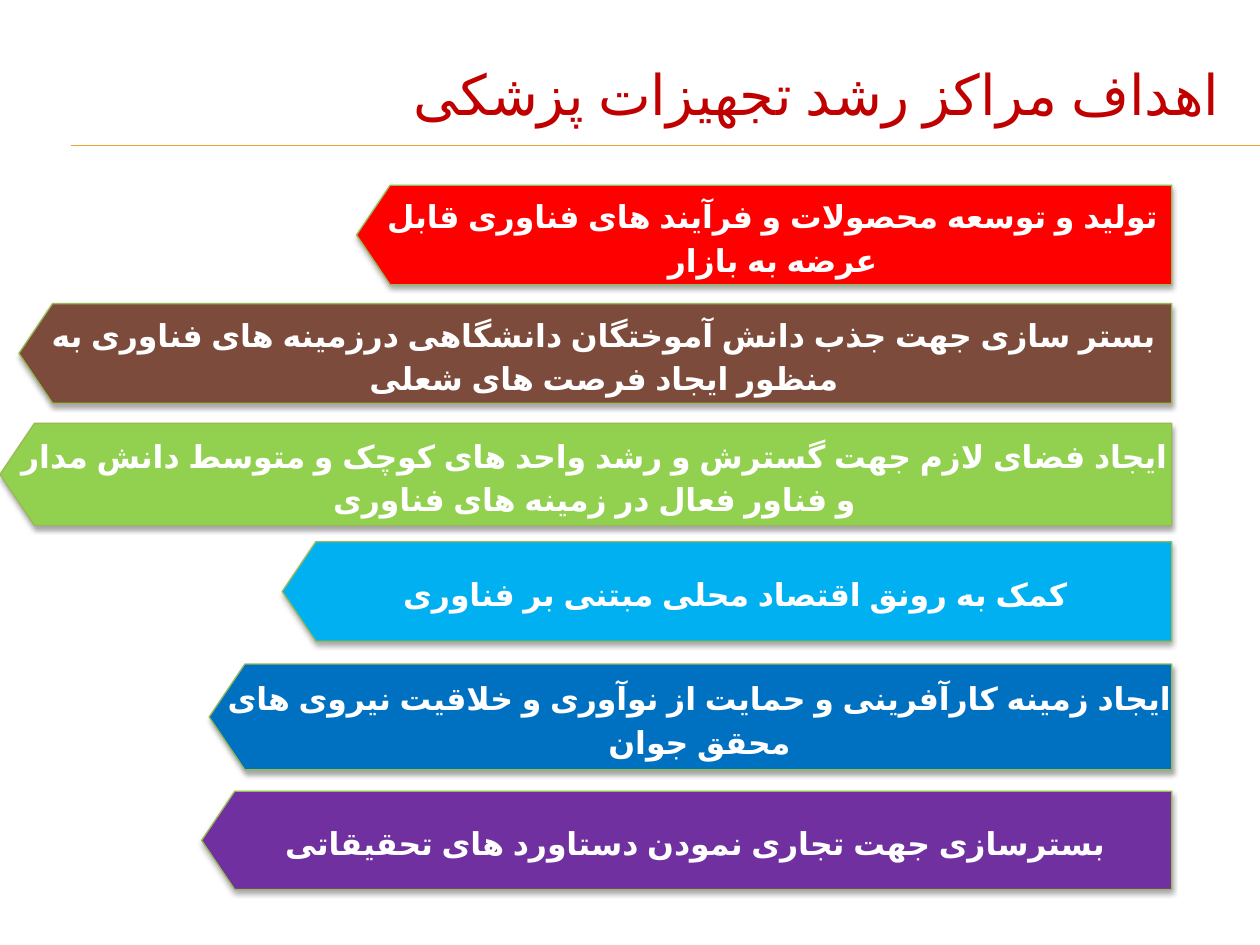
import dataclasses

import lxml.etree
import pptx
import pptx.dml.color
import pptx.enum.lang
import pptx.enum.shapes
import pptx.enum.text
import pptx.oxml.ns
import pptx.util

qn = pptx.oxml.ns.qn
MSO_ANCHOR = pptx.enum.text.MSO_ANCHOR
PP_ALIGN = pptx.enum.text.PP_ALIGN
W, H = pptx.util.Inches(10), pptx.util.Inches(7.5)


@dataclasses.dataclass(frozen=True)
class Theme:
    """Colours, font and sizes of the slide."""

    font: str = "Lato"
    title: str = "C00000"
    rule: str = "F0A22E"
    outline: str = "98B955"
    arrow_text: str = "FFFFFF"
    shadow: str = "000000"
    title_size: float = 32
    arrow_size: float = 18
    line_width: float = 0.75


THEME = Theme()
TITLE = "اهداف مراکز رشد تجهیزات پزشکی"
TITLE_BOX = (2.8, 4.8, 95, 10.13)
RULES = (15.37, 15.42)
RULE_LEFT = 5.6
ARROW_RIGHT = 93
ARROWS = [
    (28.3, 19.6, 10.53, "FF0000",
     "تولید و توسعه محصولات و فرآیند های فناوری قابل عرضه به بازار"),
    (1.5, 32.13, 10.53, "7C4B3B",
     "بستر سازی جهت جذب دانش آموختگان دانشگاهی درزمینه های فناوری به منظور ایجاد فرصت های شعلی"),
    (0, 44.8, 10.8, "92D050",
     "ایجاد فضای لازم جهت گسترش و رشد واحد های کوچک و متوسط دانش مدار و فناور فعال در زمینه های فناوری"),
    (22.4, 57.33, 10.53, "00B0F0",
     "کمک به رونق اقتصاد محلی مبتنی بر فناوری"),
    (16.6, 70.27, 11.2, "0070C0",
     "ایجاد زمینه کارآفرینی و حمایت از نوآوری و خلاقیت نیروی های محقق جوان"),
    (16, 83.73, 10.4, "7030A0",
     "بسترسازی جهت تجاری نمودن دستاورد های تحقیقاتی"),
]


def rgb(value):
    """Return the colour object for a hex value."""
    return pptx.dml.color.RGBColor.from_string(value)


def place(box):
    """Turn a box in percent of the slide into lengths."""
    x, y, w, h = box
    return [round(v * side / 100) for v, side in ((x, W), (y, H), (w, W), (h, H))]


def add_text(tf, text, *, size, color, bold=False, align=PP_ALIGN.CENTER, spacing=None):
    """Write one right-to-left Persian paragraph into a text frame."""
    tf.word_wrap = True
    tf.vertical_anchor = MSO_ANCHOR.MIDDLE
    p = tf.paragraphs[0]
    p.alignment = align
    p.line_spacing = spacing
    p._p.get_or_add_pPr().set("rtl", "1")
    r = p.add_run()
    r.text = text
    r.font.name = THEME.font
    r.font.size = pptx.util.Pt(size)
    r.font.bold = bold
    r.font.color.rgb = rgb(color)
    r._r.get_or_add_rPr().set("lang", "fa-IR")


def add_shadow(sp):
    """Give a shape a soft shadow that falls straight down."""
    sp.shadow.inherit = False
    effects = sp._element.spPr.find(qn("a:effectLst"))
    shadow = lxml.etree.SubElement(
        effects, qn("a:outerShdw"), blurRad=str(pptx.util.Pt(3.1)),
        dist=str(pptx.util.Pt(1.8)), dir="5400000", rotWithShape="0")
    color = lxml.etree.SubElement(shadow, qn("a:srgbClr"), val=THEME.shadow)
    lxml.etree.SubElement(color, qn("a:alpha"), val="35000")


def add_rule(s, left, y):
    """Draw a horizontal rule from left to the slide's right edge."""
    x, y, w, _ = place((left, y, 100 - left, 0))
    line = s.shapes.add_connector(
        pptx.enum.shapes.MSO_CONNECTOR.STRAIGHT, x, y, x + w, y)
    line.line.color.rgb = rgb(THEME.rule)
    line.line.width = pptx.util.Pt(THEME.line_width)
    lxml.etree.SubElement(line._element.spPr, qn("a:effectLst"))


def add_arrow(s, box, fill, text):
    """Draw a left-pointing arrow with upright text."""
    sp = s.shapes.add_shape(pptx.enum.shapes.MSO_SHAPE.PENTAGON, *place(box))
    sp.adjustments[0] = 0.337
    sp.rotation = 180
    sp.fill.solid()
    sp.fill.fore_color.rgb = rgb(fill)
    sp.line.color.rgb = rgb(THEME.outline)
    sp.line.width = pptx.util.Pt(THEME.line_width)
    add_shadow(sp)
    tf = sp.text_frame
    tf.margin_left = tf.margin_right = tf.margin_top = tf.margin_bottom = 0
    tf._txBody.bodyPr.set("rot", "10800000")
    add_text(tf, text, size=THEME.arrow_size, color=THEME.arrow_text,
             bold=True, spacing=1.15)


def add_title(s, box, text):
    """Place the slide title."""
    sp = s.shapes.add_textbox(*place(box))
    add_text(sp.text_frame, text, size=THEME.title_size, color=THEME.title,
             align=PP_ALIGN.RIGHT)


def main():
    """Build and save the slide."""
    prs = pptx.Presentation()
    prs.slide_width, prs.slide_height = W, H
    s = prs.slides.add_slide(prs.slide_layouts[6])
    for y in RULES:
        add_rule(s, RULE_LEFT, y)
    for left, top, height, fill, text in reversed(ARROWS):
        add_arrow(s, (left, top, ARROW_RIGHT - left, height), fill, text)
    add_title(s, TITLE_BOX, TITLE)
    prs.save("out.pptx")


if __name__ == "__main__":
    main()
